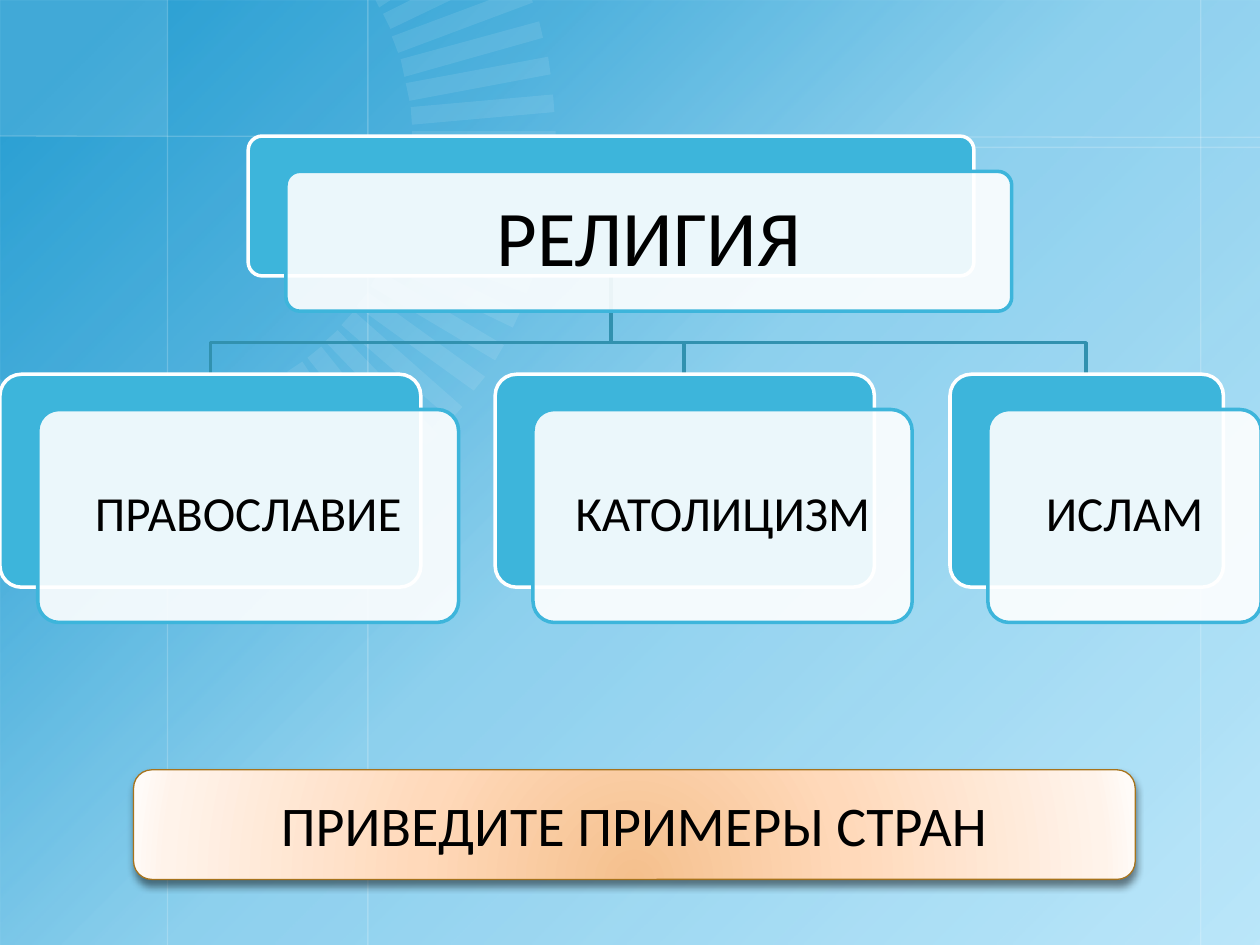
from math import cos, sin, radians
from lxml.etree import SubElement
from pptx import Presentation
from pptx.dml.color import RGBColor
from pptx.enum.shapes import MSO_CONNECTOR, MSO_SHAPE
from pptx.enum.text import MSO_ANCHOR, PP_ALIGN
from pptx.oxml.ns import qn
from pptx.util import Pt

PX = 9144  # one px is 0.01 inch
WIDE, HIGH = 1000, 750

WHITE = RGBColor(0xFF, 0xFF, 0xFF)
BLACK = RGBColor(0x00, 0x00, 0x00)
SKY = RGBColor(0xBC, 0xE7, 0xFA)
BLUE = RGBColor(0x0F, 0x92, 0xCC)
PALE = RGBColor(0xF2, 0xFA, 0xFE)
AQUA = RGBColor(0x3D, 0xB5, 0xDB)
TEAL = RGBColor(0x31, 0x91, 0xAF)
BROWN = RGBColor(0xA7, 0x73, 0x1C)
PEACH = [RGBColor(0xF5, 0xC0, 0x8D), RGBColor(0xFF, 0xD9, 0xBA),
         RGBColor(0xFF, 0xF3, 0xEA), RGBColor(0xFF, 0xFB, 0xF8)]

# Content: text, left, top, width, height, font size, inset
ROOT = ("РЕЛИГИЯ", 197, 108, 576, 111, 45, 19)
KIDS = [("ПРАВОСЛАВИЕ", 0, 297, 334, 169, 28, 12),
        ("КАТОЛИЦИЗМ", 393, 297, 301, 169, 28, 12),
        ("ИСЛАМ", 754, 297, 217, 169, 28, 12)]
TASK = "ПРИВЕДИТЕ ПРИМЕРЫ СТРАН"
SHIFT = 30, 28  # front card against back card
BEND = 272      # height of the tree's crossbar

# Backdrop: position and opacity of the glow, thin lines, spokes of the wheel
GLOW = [(6, BLUE, 83), (26, BLUE, 63), (50, BLUE, 27), (100, BLUE, 0)]
RULES = [(133, 0, 133, HIGH), (953, 0, 953, HIGH), (292, 0, 292, HIGH),
         (0, 108, WIDE, 109), (633, 117, WIDE, 117)]
HUB = 113, 111
INNER, OUTER, HALF = 214, 328, 7
STEP, TALL = 5.05, 1.02
TURNS = [*range(-4, 1), *range(4, 12), 21.7]
CUT = [[(298, 0), (310, 0), (301, 6)],
       [(326, 0), (358, 0), (310, 23), (304, 11)],
       [(15, 309), (27, 315), (0, 375), (0, 343)],
       [(0, 301), (10, 307), (0, 324)]]

deck = Presentation()
deck.slide_width, deck.slide_height = WIDE * PX, HIGH * PX
slide = deck.slides.add_slide(deck.slide_layouts[6])
slide.background.fill.solid()
slide.background.fill.fore_color.rgb = SKY
shapes = slide.shapes


def fade(node, pct):
    color = next(node.iter(qn("a:srgbClr")))
    SubElement(color, qn("a:alpha"), val=str(pct * 1000))


def paint(shape, fill=None, pct=100, line=None, width=2):
    shape.shadow.inherit = False
    if fill is None:
        shape.fill.background()
    else:
        shape.fill.solid()
        shape.fill.fore_color.rgb = fill
        if pct < 100:
            fade(shape.fill._xPr.find(qn("a:solidFill")), pct)
    if line is None:
        shape.line.fill.background()
    else:
        shape.line.color.rgb = line
        shape.line.width = Pt(width)


def blend(shape, stops):
    shape.fill.gradient()
    grad = shape._element.spPr.find(qn("a:gradFill"))
    for child in list(grad):
        grad.remove(child)
    rows = SubElement(grad, qn("a:gsLst"))
    for pos, color, pct in stops:
        stop = SubElement(rows, qn("a:gs"), pos=str(pos * 1000))
        SubElement(stop, qn("a:srgbClr"), val=str(color))
        if pct < 100:
            fade(stop, pct)
    return grad


def block(kind, left, top, width, height):
    return shapes.add_shape(kind, left * PX, top * PX, width * PX, height * PX)


def trace(points, close):
    first, *rest = points
    pen = shapes.build_freeform(*first, scale=PX)
    pen.add_line_segments(rest, close=close)
    return pen.convert_to_shape()


def write(shape, text, size, inset=None):
    frame = shape.text_frame
    frame.word_wrap = True
    frame.vertical_anchor = MSO_ANCHOR.MIDDLE
    if inset is not None:
        frame.margin_left = frame.margin_right = inset * PX
        frame.margin_top = frame.margin_bottom = inset * PX
    para = frame.paragraphs[0]
    para.text = text
    para.alignment = PP_ALIGN.CENTER
    para.font.name = "Calibri"
    para.font.size = Pt(size)
    para.font.color.rgb = BLACK
    return para


def card(text, left, top, width, height, size, inset):
    back = block(MSO_SHAPE.ROUNDED_RECTANGLE, left, top, width, height)
    paint(back, AQUA, line=WHITE)
    front = block(MSO_SHAPE.ROUNDED_RECTANGLE,
                  left + SHIFT[0], top + SHIFT[1], width, height)
    paint(front, WHITE, 90, AQUA)
    back.adjustments[0] = front.adjustments[0] = 0.1
    write(front, text, size, inset).line_spacing = 0.9


def spoke(turn):
    angle = radians(turn * STEP)
    c, s = cos(angle), sin(angle)
    ends = [(INNER, -HALF), (OUTER, -HALF), (OUTER, HALF), (INNER, HALF)]
    return [(round(HUB[0] + r * c - w * s), round(HUB[1] + TALL * r * s + w * c))
            for r, w in ends]


# Backdrop
glow = block(MSO_SHAPE.RECTANGLE, 0, 0, WIDE, HIGH)
paint(glow)
SubElement(blend(glow, GLOW), qn("a:lin"), ang=str(45 * 60000), scaled="0")
paint(block(MSO_SHAPE.RECTANGLE, 0, 0, 133, 108), WHITE, 10)
for ends in RULES:
    rule = shapes.add_connector(MSO_CONNECTOR.STRAIGHT, *(v * PX for v in ends))
    rule.line.color.rgb = WHITE
    rule.line.width = Pt(0.75)
    fade(rule.line._ln, 20)
    SubElement(rule._element.spPr, qn("a:effectLst"))
for points in CUT + [spoke(turn) for turn in TURNS]:
    paint(trace(points, True), PALE, 10)

# Tree: branches first, cards over them
_, left, top, width, height, *_ = ROOT
stem, base = left + width // 2, top + height
for _, left, top, width, *_ in reversed(KIDS):
    mid = left + width // 2
    branch = trace([(stem, base), (stem, BEND), (mid, BEND), (mid, top)], False)
    paint(branch, line=TEAL)
for item in [ROOT, *KIDS]:
    card(*item)

# Task bar
bar = block(MSO_SHAPE.ROUNDED_RECTANGLE, 106, 611, 795, 87)
paint(bar, line=BROWN, width=0.75)
grad = blend(bar, [(pos, color, 100) for pos, color in zip((0, 43, 93, 100), PEACH)])
ring = SubElement(grad, qn("a:path"), path="circle")
SubElement(ring, qn("a:fillToRect"), l="50000", t="130000", r="50000", b="-30000")
shade = SubElement(bar._element.spPr.find(qn("a:effectLst")), qn("a:outerShdw"),
                   blurRad=str(Pt(4.5)), dist=str(Pt(3)), dir=str(90 * 60000),
                   rotWithShape="0")
SubElement(shade, qn("a:srgbClr"), val=str(BLACK))
fade(shade, 48)
write(bar, TASK, 32)

deck.save("out.pptx")
